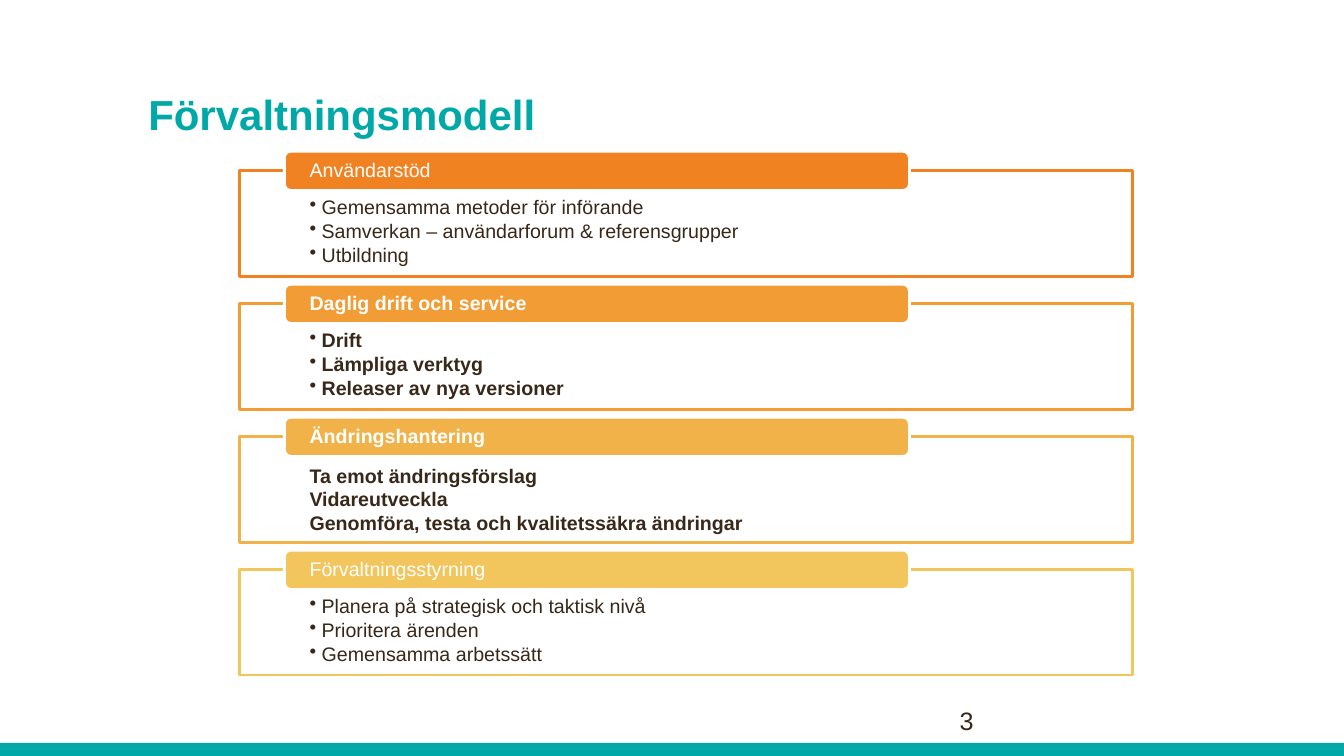
"""Build the management model slide: four titled cards stacked at an even pitch."""
from dataclasses import dataclass

from lxml import etree
from pptx import Presentation
from pptx.dml.color import RGBColor
from pptx.enum.shapes import MSO_SHAPE
from pptx.enum.text import MSO_ANCHOR, MSO_AUTO_SIZE, PP_ALIGN
from pptx.oxml.ns import qn
from pptx.util import Inches, Pt

RECTANGLE = MSO_SHAPE.RECTANGLE
ROUNDED = MSO_SHAPE.ROUNDED_RECTANGLE
TOP, MIDDLE, BOTTOM = MSO_ANCHOR.TOP, MSO_ANCHOR.MIDDLE, MSO_ANCHOR.BOTTOM
LEFT = PP_ALIGN.LEFT
NO_AUTOFIT = MSO_AUTO_SIZE.NONE

SLIDE_WIDTH, SLIDE_HEIGHT = Inches(13.33), Inches(7.5)
FONT = "Arial"
COLORS = {
    "teal": "00A9A7",
    "brown": "382819",
    "white": "FFFFFF",
    "orange": "F18221",
    "amber": "F19C35",
    "gold": "F1B249",
    "yellow": "F2C65D",
}


@dataclass(frozen=True)
class Box:
    """Position and size in percent of the slide's width and height."""

    left: float
    top: float
    width: float
    height: float

    def lengths(self) -> tuple:
        """Return left, top, width and height as lengths."""
        return across(self.left), down(self.top), across(self.width), down(self.height)

    def lowered(self, distance: float) -> "Box":
        """Return the box moved down by a percentage of the slide."""
        return Box(self.left, self.top + distance, self.width, self.height)


@dataclass(frozen=True)
class Card:
    """One area of the model with its heading and points."""

    heading: str
    points: tuple
    color: str
    bold: bool = False
    bulleted: bool = True


BAND = Box(0, 98.27, 100, 1.73)
TITLE = Box(11.03, 4.8, 77.94, 13.6)
NUMBER = Box(70.67, 92.67, 22.5, 5.33)
FRAME = Box(17.85, 22.53, 66.39, 14)
TAB = Box(21.16, 20, 46.51, 5.2)
PITCH = 17.59

CARDS = (
    Card("Användarstöd", (
        "Gemensamma metoder för införande",
        "Samverkan – användarforum & referensgrupper",
        "Utbildning",
    ), "orange"),
    Card("Daglig drift och service", (
        "Drift",
        "Lämpliga verktyg",
        "Releaser av nya versioner",
    ), "amber", bold=True),
    Card("Ändringshantering", (
        "Ta emot ändringsförslag",
        "Vidareutveckla",
        "Genomföra, testa och kvalitetssäkra ändringar",
    ), "gold", bold=True, bulleted=False),
    Card("Förvaltningsstyrning", (
        "Planera på strategisk och taktisk nivå",
        "Prioritera ärenden",
        "Gemensamma arbetssätt",
    ), "yellow"),
)


def across(percent: float) -> int:
    """Convert a percentage of the slide's width to a length."""
    return round(SLIDE_WIDTH * percent / 100)


def down(percent: float) -> int:
    """Convert a percentage of the slide's height to a length."""
    return round(SLIDE_HEIGHT * percent / 100)


def rgb(name: str) -> RGBColor:
    """Look up a named color."""
    return RGBColor.from_string(COLORS[name])


def style_text(paragraph, size: float, color: str, bold: bool = False) -> None:
    """Align a paragraph left and format its runs."""
    paragraph.alignment = LEFT
    for run in paragraph.runs:
        run.font.name = FONT
        run.font.size = Pt(size)
        run.font.bold = bold
        run.font.color.rgb = rgb(color)


def set_frame(text_frame, anchor, side: float, top: float, bottom: float) -> None:
    """Set wrapping, anchor and margins in percent of the slide."""
    text_frame.word_wrap = True
    text_frame.auto_size = NO_AUTOFIT
    text_frame.vertical_anchor = anchor
    text_frame.margin_left = text_frame.margin_right = across(side)
    text_frame.margin_top, text_frame.margin_bottom = down(top), down(bottom)


def set_indent(paragraph, bulleted: bool) -> None:
    """Give a paragraph a hanging bullet or no indent at all."""
    indent = Inches(0.12) if bulleted else 0
    properties = paragraph._p.get_or_add_pPr()
    properties.set("marL", str(indent))
    properties.set("indent", str(-indent))
    if bulleted:
        etree.SubElement(properties, qn("a:buChar"), char="•")
    else:
        etree.SubElement(properties, qn("a:buNone"))


def add_block(slide, kind, box: Box, fill: str, line: str | None = None):
    """Add a flat filled shape with an optional outline."""
    shape = slide.shapes.add_shape(kind, *box.lengths())
    shape.shadow.inherit = False
    shape.fill.solid()
    shape.fill.fore_color.rgb = rgb(fill)
    if line:
        shape.line.color.rgb = rgb(line)
        shape.line.width = Pt(2)
    else:
        shape.line.fill.background()
    return shape


def add_card(slide, card: Card, distance: float) -> None:
    """Draw a framed list with its heading tab over the top edge."""
    frame = add_block(slide, RECTANGLE, FRAME.lowered(distance), "white", card.color)
    set_frame(frame.text_frame, TOP, 5.18, 3.6, 1.47)
    frame.text_frame.text = "\n".join(card.points)
    for paragraph in frame.text_frame.paragraphs:
        paragraph.level = 1
        set_indent(paragraph, card.bulleted)
        if card.bulleted:
            paragraph.line_spacing = 0.9
            paragraph.space_after = Pt(2.1)
        style_text(paragraph, 14, "brown", card.bold)

    tab = add_block(slide, ROUNDED, TAB.lowered(distance), card.color, "white")
    set_frame(tab.text_frame, MIDDLE, 1.73, 0, 0)
    tab.text_frame.text = card.heading
    heading = tab.text_frame.paragraphs[0]
    heading.line_spacing = 0.9
    style_text(heading, 14, "white", card.bold)


def main() -> None:
    """Create and save the presentation."""
    presentation = Presentation()
    presentation.slide_width, presentation.slide_height = SLIDE_WIDTH, SLIDE_HEIGHT
    slide = presentation.slides.add_slide(presentation.slide_layouts.get_by_name("Title Only"))

    add_block(slide, RECTANGLE, BAND, "teal")

    title = slide.shapes.title
    title.left, title.top, title.width, title.height = TITLE.lengths()
    set_frame(title.text_frame, BOTTOM, 0, 0, 0)
    title.text_frame.text = "Förvaltningsmodell"
    style_text(title.text_frame.paragraphs[0], 30, "teal", bold=True)

    number = slide.shapes.add_textbox(*NUMBER.lengths())
    number.text_frame.word_wrap = True
    number.text_frame.text = "3"
    style_text(number.text_frame.paragraphs[0], 18, "brown")

    for index, card in enumerate(CARDS):
        add_card(slide, card, index * PITCH)

    presentation.save("out.pptx")


if __name__ == "__main__":
    main()
